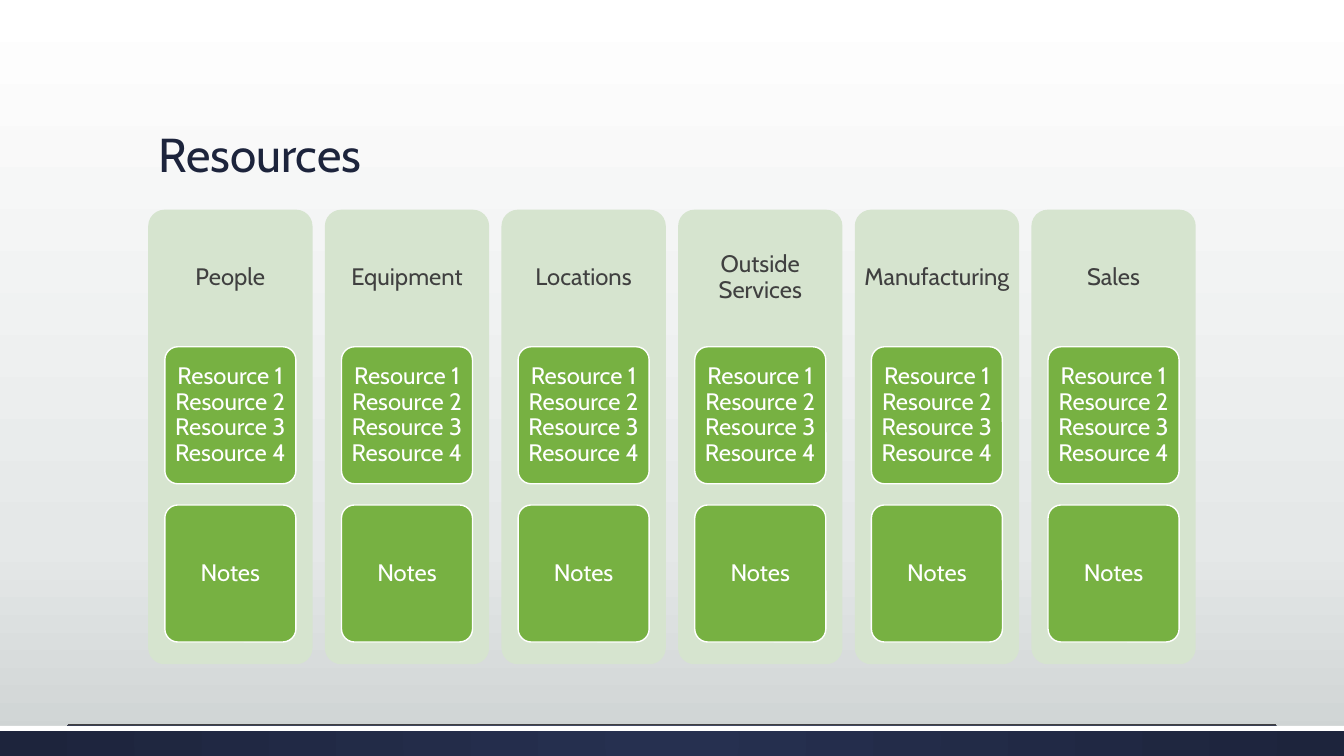
import pptx
import pptx.util
import pptx.oxml
import pptx.oxml.ns
from pptx.dml.color import RGBColor
from pptx.enum.shapes import MSO_CONNECTOR, MSO_SHAPE
from pptx.enum.text import MSO_ANCHOR, PP_ALIGN

Inches, Pt = pptx.util.Inches, pptx.util.Pt
qn, parse_xml = pptx.oxml.ns.qn, pptx.oxml.parse_xml
NSDECL = pptx.oxml.ns.nsdecls("a")

WHITE = RGBColor(0xFF, 0xFF, 0xFF)
NAVY = RGBColor(0x1D, 0x24, 0x3C)
GREY = RGBColor(0x40, 0x40, 0x40)
PALE = RGBColor(0xD6, 0xE4, 0xCF)
GREEN = RGBColor(0x77, 0xB1, 0x42)
FONT = "Cabin"


def set_gradient(fill, element, stops, direction):
    """Give a fill any number of (percent, colour) stops."""
    fill.gradient()
    grad = element.find(".//" + qn("a:gradFill"))
    for child in list(grad):
        grad.remove(child)
    items = "".join(f'<a:gs pos="{pos * 1000}"><a:srgbClr val="{color}"/></a:gs>'
                    for pos, color in stops)
    grad.append(parse_xml(f"<a:gsLst {NSDECL}>{items}</a:gsLst>"))
    grad.append(parse_xml(direction))


def add_box(shape, left, top, width, height, fill=None, text="", color=WHITE, inset=0.04):
    """Add a filled shape with centred text."""
    sp = s.shapes.add_shape(shape, Inches(left), Inches(top), Inches(width), Inches(height))
    sp.shadow.inherit = False
    sp.line.fill.background()
    if fill is not None:
        sp.fill.solid()
        sp.fill.fore_color.rgb = fill
    if shape == MSO_SHAPE.ROUNDED_RECTANGLE:
        sp.adjustments[0] = 0.1
    if text:
        tf = sp.text_frame
        tf.word_wrap = True
        tf.vertical_anchor = MSO_ANCHOR.MIDDLE
        tf.margin_left = tf.margin_right = tf.margin_top = tf.margin_bottom = Inches(inset)
        p = tf.paragraphs[0]
        p.text = text
        p.alignment = PP_ALIGN.CENTER
        p.line_spacing = 0.9
        p.font.name, p.font.size, p.font.color.rgb = FONT, Pt(17), color
    return sp


prs = pptx.Presentation()
prs.slide_width, prs.slide_height = Inches(13.33), Inches(7.5)
s = prs.slides.add_slide(prs.slide_layouts[5])

# Background
set_gradient(s.background.fill, s.element,
             [(0, "FFFFFF"), (72, "E5E8E8"), (100, "CDD2D2")],
             f'<a:lin {NSDECL} ang="5400000" scaled="0"/>')

# Footer band with its white edge and thin rule
band = add_box(MSO_SHAPE.RECTANGLE, 0, 7.2, 13.33, 0.3)
set_gradient(band.fill, band.element, [(0, "263050"), (100, "1D243C")],
             f'<a:path {NSDECL} path="circle">'
             '<a:fillToRect l="50000" t="50000" r="50000" b="50000"/></a:path>')
add_box(MSO_SHAPE.RECTANGLE, 0, 7.2, 13.33, 0.05, WHITE)
rule = s.shapes.add_connector(MSO_CONNECTOR.STRAIGHT, Inches(0.67), Inches(7.19),
                              Inches(12.66), Inches(7.19))
rule.line.color.rgb, rule.line.width = GREY, Pt(0.5)
rule.element.spPr.append(parse_xml(f"<a:effectLst {NSDECL}/>"))

# Title
title = s.shapes.title
title.left, title.top = Inches(1.47), Inches(0.51)
title.width, title.height = Inches(10.4), Inches(1.35)
tf = title.text_frame
tf.vertical_anchor = MSO_ANCHOR.BOTTOM
p = tf.paragraphs[0]
p.text = "Resources"
p.alignment = PP_ALIGN.LEFT
p.line_spacing = 0.9
p.font.name, p.font.size, p.font.color.rgb = FONT, Pt(34), NAVY

# Columns: a heading over two cards
headings = ["People", "Equipment", "Locations", "Outside Services", "Manufacturing", "Sales"]
resources = "\n".join(f"Resource {n}" for n in range(1, 5))
LEFT, TOP, COL_W, COL_H, HEAD_H = 1.47, 2.08, 1.63, 4.51, 1.35
PITCH = (10.23 - LEFT) / (len(headings) - 1)
CARD_W, CARD_H, CARD_TOP, CARD_PITCH = 1.3, 1.36, 3.44, 1.57

for col, heading in enumerate(headings):
    left = LEFT + col * PITCH
    column = add_box(MSO_SHAPE.ROUNDED_RECTANGLE, left, TOP, COL_W, COL_H,
                     PALE, heading, GREY, 0.02)
    column.text_frame.margin_bottom = Inches(COL_H - HEAD_H + 0.02)
    for row, text in enumerate([resources, "Notes"]):
        card = add_box(MSO_SHAPE.ROUNDED_RECTANGLE, left + (COL_W - CARD_W) / 2,
                       CARD_TOP + row * CARD_PITCH, CARD_W, CARD_H, GREEN, text)
        card.line.color.rgb, card.line.width = WHITE, Pt(1)

prs.save("out.pptx")
